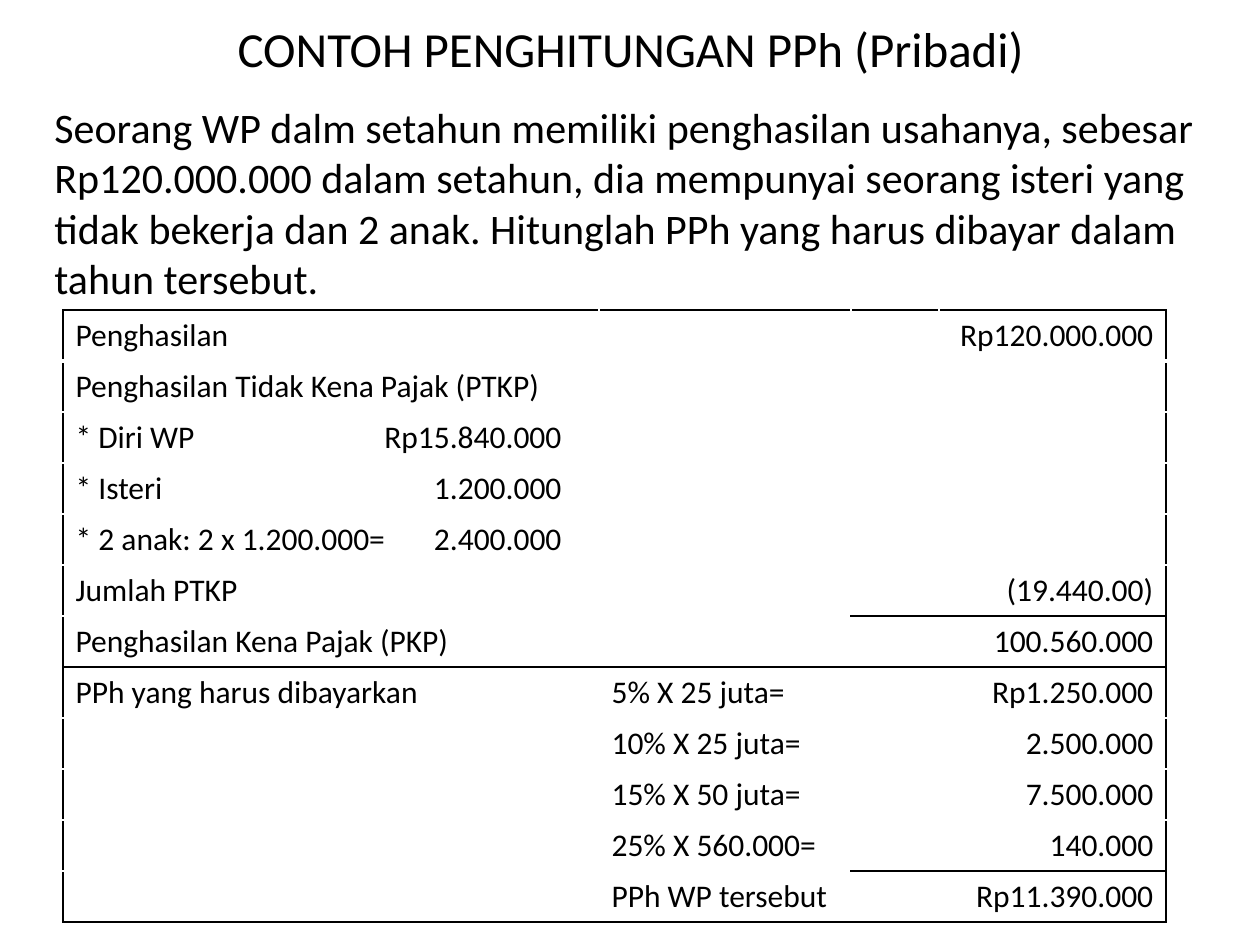
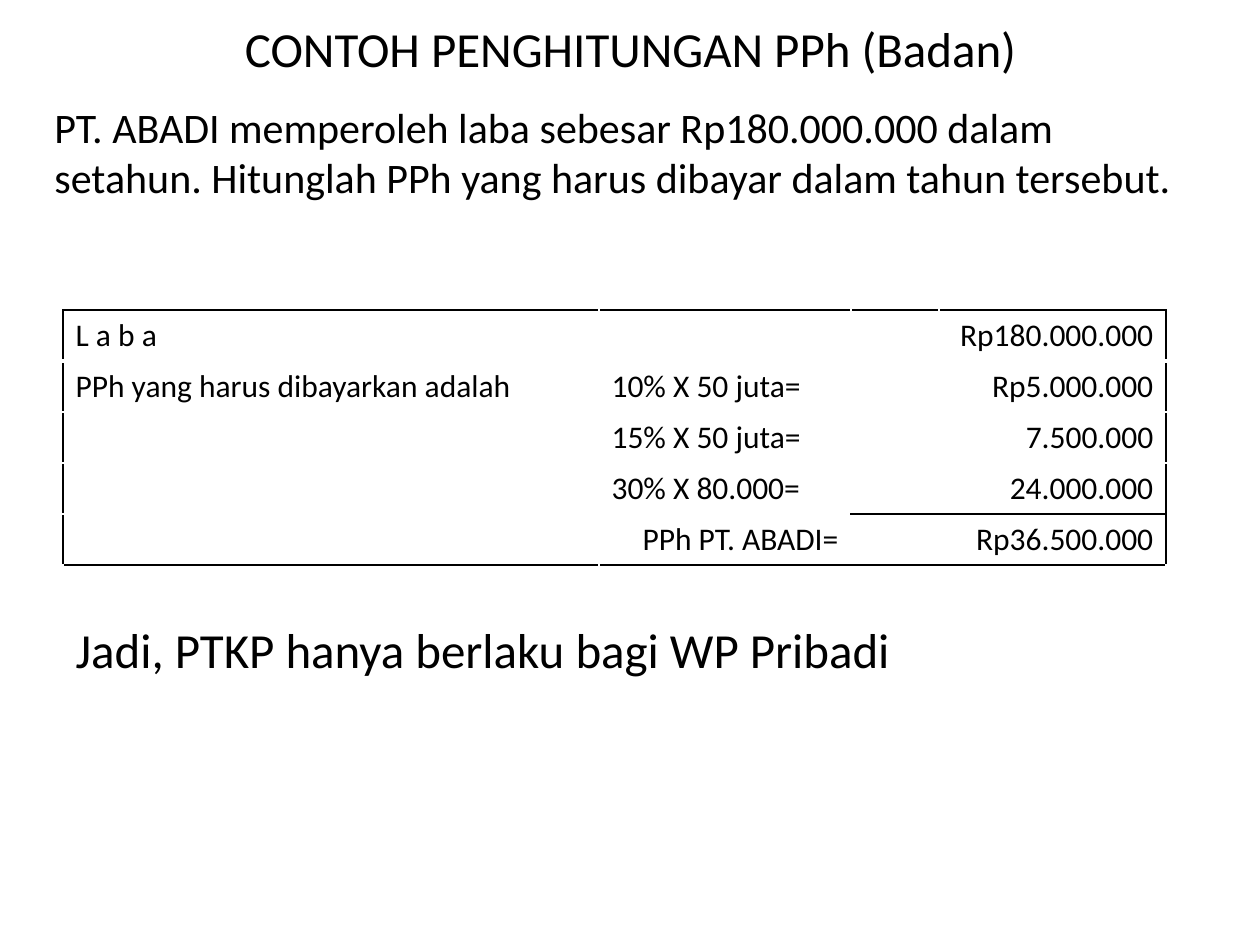
"""Builds two slides of worked income tax examples."""
from dataclasses import dataclass

from lxml.etree import SubElement
from pptx import Presentation
from pptx.dml.color import RGBColor
from pptx.enum.text import MSO_ANCHOR, PP_ALIGN
from pptx.oxml.ns import qn
from pptx.util import Emu, Pt

PX_PER_INCH = 126
COLUMN_WIDTHS = (536, 252, 88, 227)
LABEL, FORMULA, AMOUNT = 0, 1, 3
ROW_HEIGHT = 51
CONCLUSION_HEIGHT = 227
DEDUCTION_TAB = 486


@dataclass(frozen=True)
class Theme:
    """Colours and type sizes shared by the slides."""
    ink: RGBColor = RGBColor(0, 0, 0)
    paper: RGBColor = RGBColor(255, 255, 255)
    font: str = "Calibri"
    title: int = 28
    question: int = 24
    entry: int = 18
    conclusion: int = 28
    rule: int = 1
    header_rule: int = 3


def px(length):
    """Converts pixels to EMU."""
    return Emu(round(length * 914400 / PX_PER_INCH))


class Deck:
    """Holds the style and the current slide."""

    def __init__(self, theme):
        """Starts an empty 4:3 presentation."""
        self.theme = theme
        self.slide = None
        self.presentation = Presentation()
        self.presentation.slide_width = px(1260)
        self.presentation.slide_height = px(945)

    def set_text(self, frame, text, size, align=PP_ALIGN.LEFT):
        """Sets one styled paragraph."""
        paragraph = frame.paragraphs[0]
        paragraph.text = text
        paragraph.alignment = align
        paragraph.font.name = self.theme.font
        paragraph.font.size = Pt(size)
        paragraph.font.color.rgb = self.theme.ink
        return paragraph

    def add_slide(self, heading):
        """Adds a slide with its heading."""
        self.slide = self.presentation.slides.add_slide(self.presentation.slide_layouts[5])
        title = self.slide.shapes.title
        title.left, title.top, title.width, title.height = map(px, (95, -10, 1071, 116))
        title.text_frame.vertical_anchor = MSO_ANCHOR.MIDDLE
        self.set_text(title.text_frame, heading, self.theme.title, PP_ALIGN.CENTER)

    def add_question(self, text):
        """Adds the case to be solved."""
        question = self.slide.shapes.add_textbox(*map(px, (42, 95, 1176, 725)))
        question.text_frame.word_wrap = True
        self.set_text(question.text_frame, text, self.theme.question)

    def add_calculation(self, entries, totals, spare_heights=()):
        """Adds a framed table; totals maps a row to the column where its rule starts."""
        heights = [ROW_HEIGHT] * len(entries) + list(spare_heights)
        table = self.slide.shapes.add_table(
            len(heights), len(COLUMN_WIDTHS), px(63), px(310),
            px(sum(COLUMN_WIDTHS)), px(sum(heights))).table
        table.first_row = table.horz_banding = False
        for column, width in zip(table.columns, COLUMN_WIDTHS):
            column.width = px(width)
        for row, height in zip(table.rows, heights):
            row.height = px(height)
        for row in range(len(heights)):
            for column in range(len(COLUMN_WIDTHS)):
                self.rule_cell(table.cell(row, column), row, column, totals, len(entries))
        for row, entry in enumerate(entries):
            for column, text in zip((LABEL, FORMULA, AMOUNT), entry):
                if text:
                    align = PP_ALIGN.RIGHT if column == AMOUNT else PP_ALIGN.LEFT
                    paragraph = self.set_text(table.cell(row, column).text_frame, text,
                                              self.theme.entry, align)
                    if "\t" in text:
                        self.add_right_tab(paragraph, DEDUCTION_TAB)
        return table

    def rule_cell(self, cell, row, column, totals, framed_rows):
        """Fills a cell and draws its four borders."""
        framed = row < framed_rows
        last = len(COLUMN_WIDTHS) - 1
        inked = {
            "a:lnL": framed and column == 0,
            "a:lnR": framed and column == last,
            "a:lnT": row == 0 or column >= totals.get(row - 1, last + 1),
            "a:lnB": column >= totals.get(row, last + 1),
        }
        properties = cell._tc.get_or_add_tcPr()
        for side, dark in inked.items():
            weight = self.theme.header_rule if (row, side) == (0, "a:lnB") else self.theme.rule
            line = SubElement(properties, qn(side), w=str(Pt(weight)))
            fill = SubElement(line, qn("a:solidFill"))
            color = self.theme.ink if dark else self.theme.paper
            SubElement(fill, qn("a:srgbClr"), val=str(color))
        cell.fill.solid()
        cell.fill.fore_color.rgb = self.theme.paper

    def add_right_tab(self, paragraph, position):
        """Adds a right-aligned tab stop."""
        properties = paragraph._p.get_or_add_pPr()
        stops = properties.makeelement(qn("a:tabLst"))
        SubElement(stops, qn("a:tab"), pos=str(px(position)), algn="r")
        properties.insert(0, stops)

    def add_spanning(self, table, row, columns, text, size, align=PP_ALIGN.LEFT):
        """Merges the first columns of a row and sets text across them."""
        cell = table.cell(row, 0)
        cell.merge(table.cell(row, columns - 1))
        self.set_text(cell.text_frame, text, size, align)


def main():
    """Builds both examples and saves the deck."""
    theme = Theme()
    deck = Deck(theme)

    deck.add_slide("CONTOH PENGHITUNGAN PPh (Pribadi)")
    deck.add_question(
        "Seorang WP dalm setahun memiliki penghasilan usahanya, sebesar Rp120.000.000 "
        "dalam setahun, dia mempunyai seorang isteri yang tidak bekerja dan 2 anak. "
        "Hitunglah PPh yang harus dibayar dalam tahun tersebut.")
    deck.add_calculation([
        ("Penghasilan", "", "Rp120.000.000"),
        ("Penghasilan Tidak Kena Pajak (PTKP)", "", ""),
        ("* Diri WP\tRp15.840.000", "", ""),
        ("* Isteri\t1.200.000", "", ""),
        ("* 2 anak: 2 x 1.200.000=\t2.400.000", "", ""),
        ("Jumlah PTKP", "", "(19.440.00)"),
        ("Penghasilan Kena Pajak (PKP)", "", "100.560.000"),
        ("PPh yang harus dibayarkan", "5% X 25 juta=", "Rp1.250.000"),
        ("", "10% X 25 juta=", "2.500.000"),
        ("", "15% X 50 juta=", "7.500.000"),
        ("", "25% X 560.000=", "140.000"),
        ("", "PPh WP tersebut", "Rp11.390.000"),
    ], totals={5: 2, 6: 0, 10: 2, 11: 0})

    deck.add_slide("CONTOH PENGHITUNGAN PPh (Badan)")
    deck.add_question(
        "PT. ABADI memperoleh laba sebesar Rp180.000.000 dalam setahun. "
        "Hitunglah PPh yang harus dibayar dalam tahun tersebut.")
    company_tax = deck.add_calculation([
        ("L a b a", "", "Rp180.000.000"),
        ("PPh yang harus dibayarkan adalah", "10% X 50 juta=", "Rp5.000.000"),
        ("", "15% X 50 juta=", "7.500.000"),
        ("", "30% X 80.000=", "24.000.000"),
        ("", "", "Rp36.500.000"),
    ], totals={3: 2, 4: 0}, spare_heights=(ROW_HEIGHT, CONCLUSION_HEIGHT))
    deck.add_spanning(company_tax, 4, 2, "PPh PT. ABADI=", theme.entry, PP_ALIGN.RIGHT)
    deck.add_spanning(company_tax, 6, 4, "Jadi, PTKP hanya berlaku bagi WP Pribadi",
                      theme.conclusion)

    deck.presentation.save("out.pptx")


if __name__ == "__main__":
    main()
